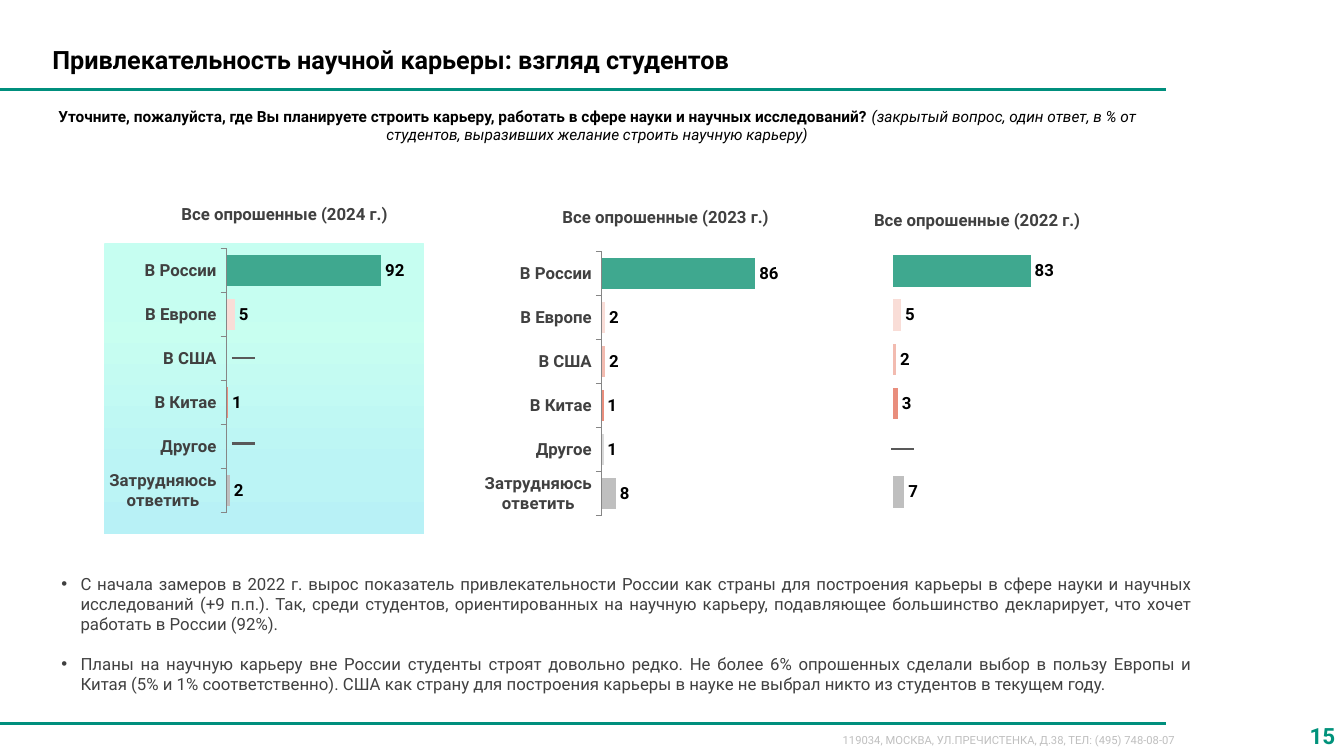
"""Builds the slide on where students plan a scientific career."""
import pptx
import pptx.chart.data
import pptx.dml.color
import pptx.enum.chart
import pptx.enum.shapes
import pptx.enum.text
import pptx.oxml
import pptx.util
from pptx.oxml.ns import nsdecls, qn

RGB = pptx.dml.color.RGBColor
Align = pptx.enum.text.PP_ALIGN
Pt = pptx.util.Pt

PX = 9144
FONT = "Roboto"
BLACK = RGB(0, 0, 0)
DARK = RGB(0x40, 0x40, 0x40)
GREY = RGB(0x59, 0x59, 0x59)
AXIS = RGB(0x86, 0x86, 0x86)
PALE = RGB(0xBF, 0xBF, 0xBF)
GREEN = RGB(0x00, 0x8F, 0x7D)
PAGE = RGB(0x00, 0x92, 0x7B)
BAR = RGB(0x00, 0x9A, 0x70)
POINTS = [RGB(0x3F, 0xA8, 0x8F), RGB(0xF9, 0xDD, 0xD7), RGB(0xF2, 0xBB, 0xB0),
          RGB(0xE9, 0x8E, 0x7D), RGB(0xD9, 0xD9, 0xD9), PALE]
STOPS = [(0, RGB(0xC6, 0xFE, 0xF1)), (27, RGB(0xC8, 0xFF, 0xF0)),
         (78, RGB(0xBB, 0xF4, 0xF5)), (100, RGB(0xB8, 0xF1, 0xF6))]

TITLE = "Привлекательность научной карьеры: взгляд студентов"
ASK = ("Уточните, пожалуйста, где Вы планируете строить карьеру, "
       "работать в сфере науки и научных исследований? ")
NOTE = "(закрытый вопрос, один ответ, в % от студентов, выразивших желание строить научную карьеру)"
ADDRESS = "119034, МОСКВА, УЛ.ПРЕЧИСТЕНКА, Д.38, ТЕЛ: (495) 748-08-07"
BULLETS = [
    "С начала замеров в 2022 г. вырос показатель привлекательности России как страны для "
    "построения карьеры в сфере науки и научных исследований (+9 п.п.). Так, среди студентов, "
    "ориентированных на научную карьеру, подавляющее большинство декларирует, что хочет "
    "работать в России (92%).",
    "Планы на научную карьеру вне России студенты строят довольно редко. Не более 6% опрошенных "
    "сделали выбор в пользу Европы и Китая (5% и 1% соответственно). США как страну для "
    "построения карьеры в науке не выбрал никто из студентов в текущем году.",
]
PLACES = ["В России", "В Европе", "В США", "В Китае", "Другое", "Затрудняюсь ответить"]
CHARTS = [
    {"year": 2024, "head": (170, 197), "box": (55, 246, 352, 263), "wide": 0.474,
     "named": True, "vals": [92, 5, None, 1, None, 2]},
    {"year": 2023, "head": (548, 200), "box": (432, 249, 342, 263), "wide": 0.518,
     "named": True, "vals": [86, 2, 2, 1, 1, 8]},
    {"year": 2022, "head": (857, 203), "box": (714, 247, 356, 263), "wide": 0.463,
     "named": False, "vals": [83, 5, 2, 3, None, 7]},
]
RULES = [89, 718]
DASHES = [(230, 355), (230, 440), (884, 445)]


def px(*nums):
    return [num * PX for num in nums]


def style(font, size, color, bold=False, italic=False):
    font.name, font.size, font.bold, font.italic = FONT, Pt(size), bold, italic
    font.color.rgb = color


def add_text(slide, box, lines, size, color, bold=False, align=Align.LEFT, middle=False):
    frame = slide.shapes.add_textbox(*px(*box)).text_frame
    frame.word_wrap = True
    if middle:
        frame.vertical_anchor = pptx.enum.text.MSO_ANCHOR.MIDDLE
    frame.text = "\n".join(lines)
    for para in frame.paragraphs:
        para.alignment = align
        for run in para.runs:
            style(run.font, size, color, bold)
    return frame


def add_line(slide, left, right, top, color, width):
    kind = pptx.enum.shapes.MSO_CONNECTOR.STRAIGHT
    line = slide.shapes.add_connector(kind, *px(left, top, right, top))
    line.line.color.rgb = color
    line.line.width = Pt(width)
    line._element.spPr.append(pptx.oxml.parse_xml(f"<a:effectLst {nsdecls('a')}/>"))


def add_panel(slide):
    kind = pptx.enum.shapes.MSO_SHAPE.ROUNDED_RECTANGLE
    panel = slide.shapes.add_shape(kind, *px(103, 241, 318, 289))
    panel.adjustments[0] = 0.006
    panel.shadow.inherit = False
    panel.line.fill.background()
    stops = "".join(f'<a:gs pos="{pos * 1000}"><a:srgbClr val="{color}"/></a:gs>'
                    for pos, color in STOPS)
    fill = pptx.oxml.parse_xml(f"<a:gradFill {nsdecls('a')}><a:gsLst>{stops}</a:gsLst>"
                               '<a:lin ang="5400000" scaled="0"/></a:gradFill>')
    panel._element.spPr.find(qn("a:prstGeom")).addnext(fill)


def add_bars(slide, item):
    data = pptx.chart.data.CategoryChartData(number_format="#,##0")
    data.categories = PLACES if item["named"] else list("123456")
    data.add_series("Series 1", item["vals"])
    kind = pptx.enum.chart.XL_CHART_TYPE.BAR_CLUSTERED
    chart = slide.shapes.add_chart(kind, *px(*item["box"]), data).chart
    chart.has_legend = chart.has_title = False
    style(chart.font, 18, BLACK)

    value = chart.value_axis
    value.minimum_scale, value.maximum_scale = 0, 100
    value.has_major_gridlines = value.visible = False
    names = chart.category_axis
    names.reverse_order = True
    names.visible = item["named"]
    names.major_tick_mark = pptx.enum.chart.XL_TICK_MARK.OUTSIDE
    names.format.line.color.rgb = AXIS
    style(names.tick_labels.font, 12, DARK, True)

    plot = chart.plots[0]
    plot.gap_width = 40
    plot.vary_by_categories = False
    series = plot.series[0]
    series.format.fill.solid()
    series.format.fill.fore_color.rgb = BAR
    for num, color in enumerate(POINTS):
        fill = series.points[num].format.fill
        fill.solid()
        fill.fore_color.rgb = color
    plot.has_data_labels = True
    labels = plot.data_labels
    labels.show_value = True
    labels.number_format, labels.number_format_is_linked = "#,##0", False
    labels.position = pptx.enum.chart.XL_LABEL_POSITION.OUTSIDE_END
    style(labels.font, 12, BLACK, True)

    area = chart._chartSpace.chart.plotArea
    for old in area.findall(qn("c:layout")):
        area.remove(old)
    sizes = "".join(f'<c:{tag} val="{val}"/>' for tag, val in
                    [("x", 0.482), ("y", 0), ("w", item["wide"]), ("h", 1)])
    area.insert(0, pptx.oxml.parse_xml(
        f"<c:layout {nsdecls('c')}><c:manualLayout><c:layoutTarget val=\"inner\"/>"
        f'<c:xMode val="edge"/><c:yMode val="edge"/>{sizes}</c:manualLayout></c:layout>'))


def add_bullets(slide):
    frame = add_text(slide, (51, 564, 1142, 111), BULLETS, 12, DARK, align=Align.JUSTIFY)
    for num, para in enumerate(frame.paragraphs):
        props = para._p.get_or_add_pPr()
        props.set("marL", str(19 * PX))
        props.set("indent", str(-19 * PX))
        for tag in ('buFont typeface="Arial"', 'buChar char="•"'):
            props.append(pptx.oxml.parse_xml(f"<a:{tag} {nsdecls('a')}/>"))
        if num:
            para.space_before = Pt(14)


def main():
    deck = pptx.Presentation()
    deck.slide_width, deck.slide_height = px(1333, 750)
    slide = deck.slides.add_slide(deck.slide_layouts[6])
    for top in RULES:
        add_line(slide, 0, 1156, top, GREEN, 2)
    add_text(slide, (826, 723, 384, 24), [ADDRESS], 8, PALE)
    add_text(slide, (1265, 710, 69, 40), ["15"], 16, PAGE, True, Align.RIGHT, True)
    add_text(slide, (42, 39, 1135, 40), [TITLE], 18, BLACK, True, Align.JUSTIFY, True)
    ask = add_text(slide, (24, 101, 1137, 47), [ASK], 11, BLACK, True, Align.CENTER)
    note = ask.paragraphs[0].add_run()
    note.text = NOTE
    style(note.font, 11, BLACK, italic=True)
    add_bullets(slide)
    add_panel(slide)
    for item in CHARTS:
        add_text(slide, (*item["head"], 232, 30), [f"Все опрошенные ({item['year']} г.)"],
                 12, DARK, True)
        add_bars(slide, item)
    for left, top in DASHES:
        add_line(slide, left, left + 23, top, GREY, 1.5)
    deck.save("out.pptx")


if __name__ == "__main__":
    main()
